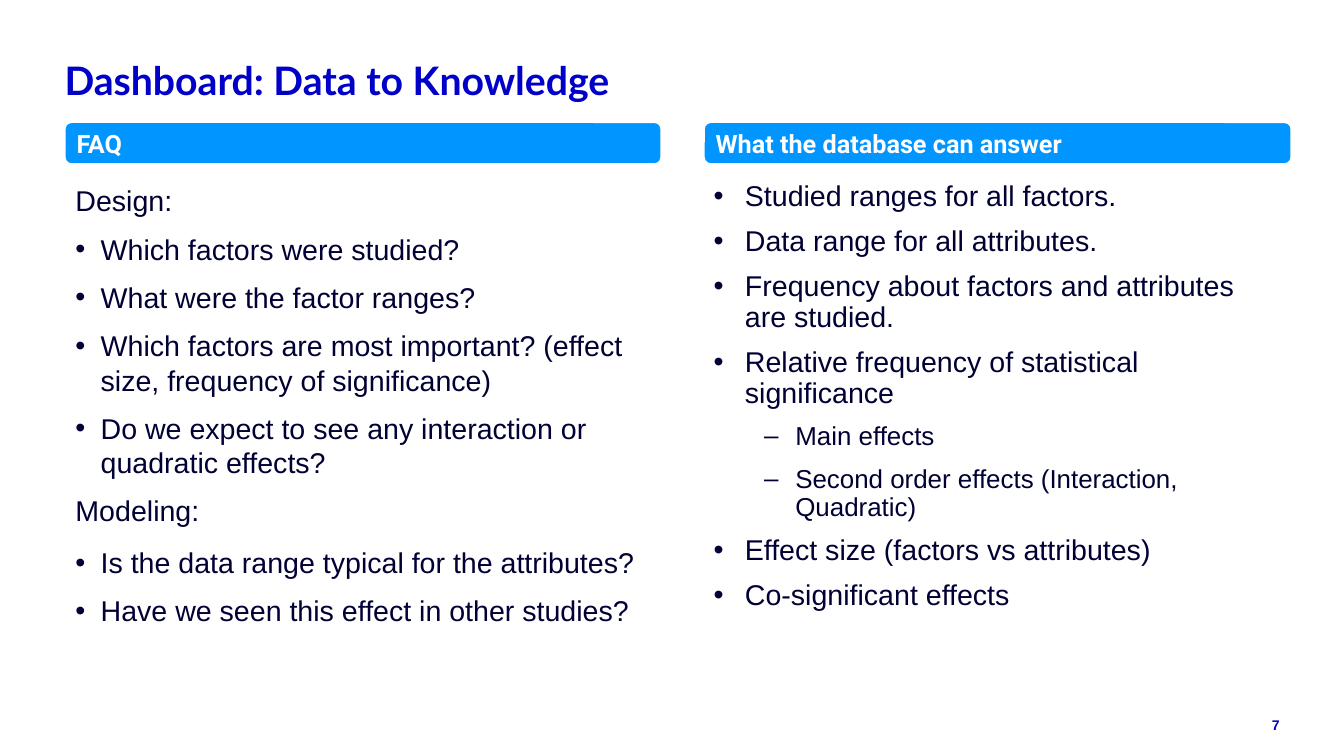
from lxml import etree
from pptx import Presentation
from pptx.dml.color import RGBColor
from pptx.enum.shapes import MSO_SHAPE
from pptx.enum.text import MSO_ANCHOR, PP_ALIGN
from pptx.oxml.ns import qn
from pptx.util import Inches, Pt

ROUNDED = MSO_SHAPE.ROUNDED_RECTANGLE
MIDDLE, BOTTOM, TOP = MSO_ANCHOR.MIDDLE, MSO_ANCHOR.BOTTOM, MSO_ANCHOR.TOP
LEFT, RIGHT = PP_ALIGN.LEFT, PP_ALIGN.RIGHT
NAVY = RGBColor(0x00, 0x00, 0x34)
BLUE = RGBColor(0x00, 0x00, 0xC9)
SKY = RGBColor(0x00, 0x95, 0xFF)
WHITE = RGBColor(0xFF, 0xFF, 0xFF)

FAQ = [
    ("Design:", None, 1.0),
    ("Which factors were studied?", "•", 1.0),
    ("What were the factor ranges?", "•", 1.0),
    ("Which factors are most important? (effect size, frequency of significance)", "•", 1.0),
    ("Do we expect to see any interaction or quadratic effects?", "•", 1.0),
    ("Modeling:", None, 1.0),
    ("Is the data range typical for the attributes?", "•", 1.1),
    ("Have we seen this effect in other studies?", "•", 1.0),
]
ANSWERS = [
    ("Studied ranges for all factors.", "•", 0.9),
    ("Data range for all attributes.", "•", 0.9),
    ("Frequency about factors and attributes are studied.", "•", 0.9),
    ("Relative frequency of statistical significance", "•", 0.9),
    ("Main effects", "–", 0.9),
    ("Second order effects (Interaction, Quadratic)", "–", 0.9),
    ("Effect size (factors vs attributes)", "•", 0.9),
    ("Co-significant effects", "•", 0.9),
]


class SlideBuilder:
    def __init__(self, prs):
        self.s = prs.slides.add_slide(prs.slide_layouts[5])

    def frame(self, sp, anchor):
        tf = sp.text_frame
        tf.word_wrap = True
        tf.vertical_anchor = anchor
        return tf

    def run(self, p, text, size, font, color, bold=False):
        r = p.add_run()
        r.text = text
        r.font.size = Pt(size)
        r.font.name = font
        r.font.bold = bold
        r.font.color.rgb = color

    def line(self, sp, anchor, align, *style):
        p = self.frame(sp, anchor).paragraphs[0]
        p.alignment = align
        self.run(p, *style, bold=True)

    def title(self, text, x, y, w, h):
        sp = self.s.shapes.title
        sp.left, sp.top, sp.width, sp.height = map(Inches, (x, y, w, h))
        self.line(sp, BOTTOM, LEFT, text, 28, "Lato", BLUE)

    def heading(self, text, x, y, w, h):
        sp = self.s.shapes.add_shape(ROUNDED, *map(Inches, (x, y, w, h)))
        sp.shadow.inherit = False
        sp.fill.solid()
        sp.fill.fore_color.rgb = SKY
        sp.line.color.rgb = WHITE
        sp.line.width = Pt(1.5)
        self.line(sp, MIDDLE, LEFT, text, 18, "Roboto", WHITE)

    def number(self, text, x, y, w, h):
        sp = self.s.shapes.add_textbox(*map(Inches, (x, y, w, h)))
        self.line(sp, MIDDLE, RIGHT, text, 10, "Arial", BLUE)

    def bullet(self, p, char, margin, hang):
        pPr = p._p.get_or_add_pPr()
        pPr.set("marL", str(Inches(margin)))
        pPr.set("indent", str(-Inches(hang)))
        etree.SubElement(pPr, qn("a:buFont")).set("typeface", "Arial")
        etree.SubElement(pPr, qn("a:buChar")).set("char", char)

    def body(self, items, hang, x, y, w, h):
        sp = self.s.shapes.add_textbox(*map(Inches, (x, y, w, h)))
        tf = self.frame(sp, TOP)
        for i, (text, char, spacing) in enumerate(items):
            p = tf.paragraphs[0] if i == 0 else tf.add_paragraph()
            sub = char == "–"
            p.line_spacing = spacing
            p.space_after = Pt(10)
            if char:
                self.bullet(p, char, hang + 0.5 * sub, hang)
            if sub:
                p.level = 2
            self.run(p, text, 18.5 if sub else 20.4, "Arial", NAVY)


def main():
    prs = Presentation()
    prs.slide_width, prs.slide_height = Inches(13.33), Inches(7.5)
    b = SlideBuilder(prs)
    b.title("Dashboard: Data to Knowledge", 0.54, 0, 12.25, 1.08)
    b.heading("FAQ", 0.64, 1.21, 5.92, 0.42)
    b.heading("What the database can answer", 6.98, 1.21, 5.83, 0.42)
    b.body(FAQ, 0.25, 0.65, 1.77, 5.92, 4.83)
    b.body(ANSWERS, 0.31, 6.98, 1.76, 5.82, 4.47)
    b.number("7", 12.24, 7.06, 0.55, 0.27)
    prs.save("out.pptx")


if __name__ == "__main__":
    main()
